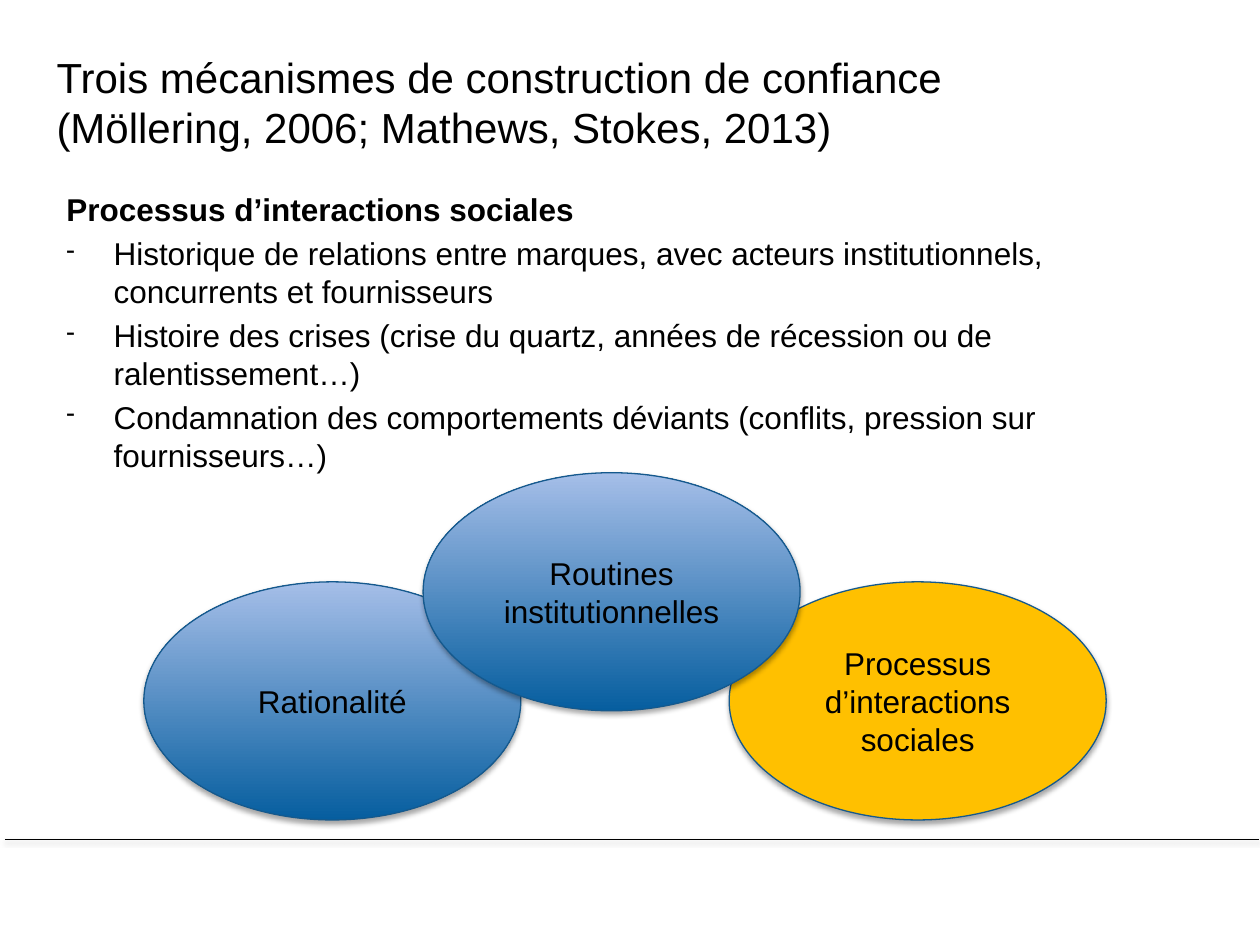
import dataclasses

import pptx
import pptx.dml.color
import pptx.enum.shapes
import pptx.enum.text
import pptx.oxml
import pptx.oxml.ns
import pptx.util
from pptx.util import Cm, Pt


@dataclasses.dataclass(frozen=True)
class Theme:
    font: str = "Arial"
    title_size: float = 24
    text_size: float = 18
    ink: str = "000000"
    outline: str = "15598D"
    dark_blue: str = "065E9F"
    light_blue: str = "A5BEE8"
    gold: str = "FFC000"
    rule_shadow: str = "808080"


THEME = Theme()
MSO_SHAPE = pptx.enum.shapes.MSO_SHAPE
PP_ALIGN = pptx.enum.text.PP_ALIGN
MSO_ANCHOR = pptx.enum.text.MSO_ANCHOR


def rgb(value):
    return pptx.dml.color.RGBColor.from_string(value)


def add_shadow(sp, color, opacity, distance):
    """Give a shape or connector a soft shadow that falls straight down."""
    spPr = sp._element.spPr
    for old in spPr.findall(pptx.oxml.ns.qn("a:effectLst")):
        spPr.remove(old)
    spPr.append(pptx.oxml.parse_xml(
        f'<a:effectLst {pptx.oxml.ns.nsdecls("a")}>'
        f'<a:outerShdw blurRad="{Pt(3.1)}" dist="{Pt(distance)}" dir="5400000" rotWithShape="0">'
        f'<a:srgbClr val="{color}"><a:alpha val="{opacity * 1000}"/></a:srgbClr>'
        '</a:outerShdw></a:effectLst>'))


def add_dash(p, indent):
    """Hang the paragraph on a dash at 80 % of the text size."""
    pPr = p._p.get_or_add_pPr()
    pPr.set("marL", str(indent))
    pPr.set("indent", str(-indent))
    for tag, name, value in (("buSzPct", "val", "80000"), ("buChar", "char", "-")):
        pPr.append(pptx.oxml.parse_xml(
            f'<a:{tag} {pptx.oxml.ns.nsdecls("a")} {name}="{value}"/>'))


def write(p, text, size=THEME.text_size, bold=False, align=PP_ALIGN.LEFT, before=0, dash=False):
    p.alignment = align
    p.space_before = Pt(before)
    if dash:
        add_dash(p, Cm(0.95))
    r = p.add_run()
    r.text = text
    r.font.name = THEME.font
    r.font.size = Pt(size)
    r.font.bold = bold
    r.font.color.rgb = rgb(THEME.ink)


def add_text(slide, left, top, width, height, lines):
    """Add a text box; lines holds pairs of text and format."""
    tf = slide.shapes.add_textbox(Cm(left), Cm(top), Cm(width), Cm(height)).text_frame
    tf.word_wrap = True
    for i, (text, style) in enumerate(lines):
        p = tf.add_paragraph() if i else tf.paragraphs[0]
        write(p, text, **style)


def add_rule(slide, left, right, y):
    line = slide.shapes.add_connector(
        pptx.enum.shapes.MSO_CONNECTOR.STRAIGHT, Cm(left), Cm(y), Cm(right), Cm(y))
    line.line.color.rgb = rgb(THEME.ink)
    line.line.width = Pt(0.25)
    add_shadow(line, THEME.rule_shadow, 38, 1.6)


def add_ellipse(slide, left, top, text, highlight=False):
    sp = slide.shapes.add_shape(MSO_SHAPE.OVAL, Cm(left), Cm(top), Cm(7.6), Cm(4.8))
    if highlight:
        sp.fill.solid()
        sp.fill.fore_color.rgb = rgb(THEME.gold)
    else:
        sp.fill.gradient()
        sp.fill.gradient_angle = 90
        for stop, color in zip(sp.fill.gradient_stops, (THEME.dark_blue, THEME.light_blue)):
            stop.color.rgb = rgb(color)
    sp.line.color.rgb = rgb(THEME.outline)
    sp.line.width = Pt(0.75)
    add_shadow(sp, THEME.ink, 35, 1.8)
    tf = sp.text_frame
    tf.word_wrap = True
    tf.vertical_anchor = MSO_ANCHOR.MIDDLE
    write(tf.paragraphs[0], text, align=PP_ALIGN.CENTER)


def main():
    prs = pptx.Presentation()
    prs.slide_width, prs.slide_height = Cm(25.4), Cm(19.05)
    slide = prs.slides.add_slide(prs.slide_layouts[6])

    add_rule(slide, 0.1, 25.37, 16.92)
    add_ellipse(slide, 14.7, 11.73, "Processus d’interactions sociales", highlight=True)

    item = {"before": 3.6, "dash": True}
    add_text(slide, 1.09, 3.71, 23.19, 13.2, [
        ("Processus d’interactions sociales", {"bold": True}),
        ("Historique de relations entre marques, avec acteurs institutionnels, "
         "concurrents et fournisseurs", item),
        ("Histoire des crises (crise du quartz, années de récession ou de ralentissement…)", item),
        ("Condamnation des comportements déviants (conflits, pression sur fournisseurs…)", item),
    ])
    title = {"size": THEME.title_size}
    add_text(slide, 0.89, 0.91, 22.86, 1.6, [
        ("Trois mécanismes de construction de confiance", title),
        ("(Möllering, 2006; Mathews, Stokes, 2013)", title),
    ])

    add_ellipse(slide, 2.9, 11.73, "Rationalité")
    add_ellipse(slide, 8.53, 9.53, "Routines institutionnelles")
    prs.save("out.pptx")


if __name__ == "__main__":
    main()
